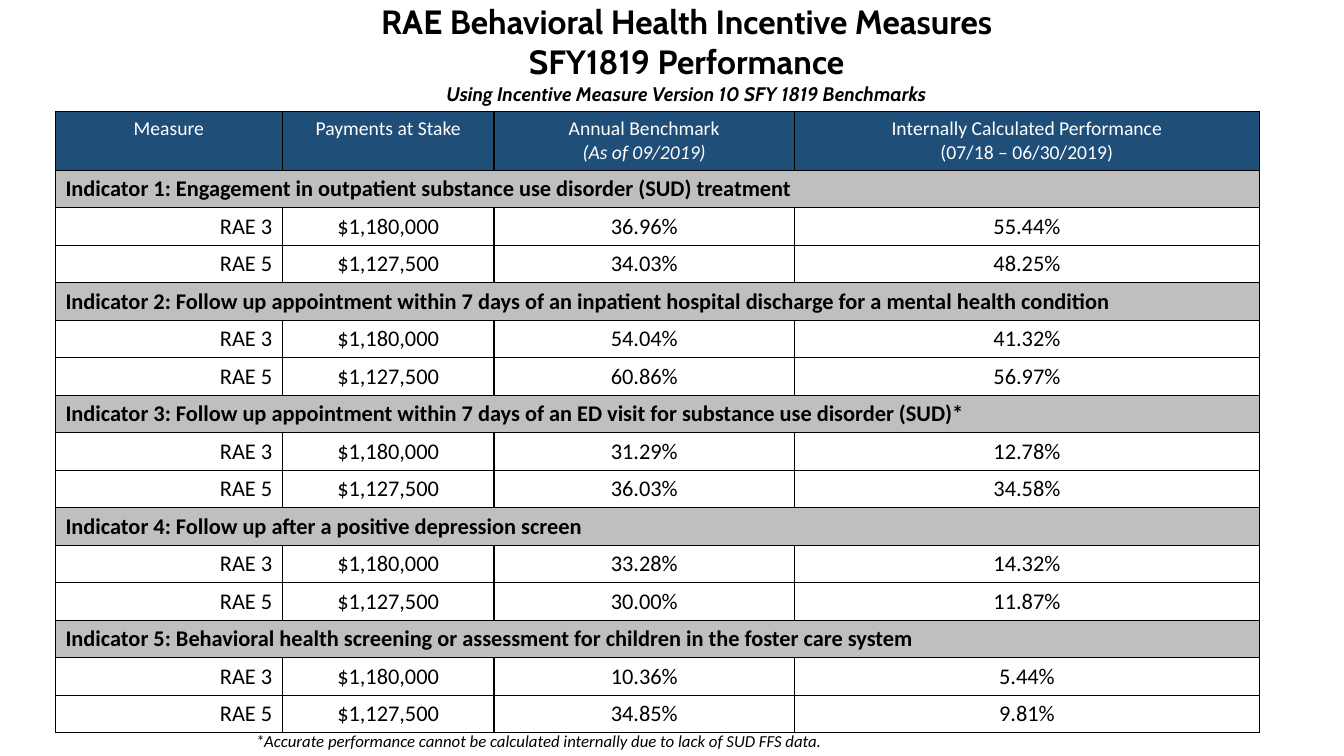
from lxml.etree import SubElement
from pptx import Presentation
from pptx.dml.color import RGBColor
from pptx.enum.text import PP_ALIGN as ALIGN
from pptx.oxml.ns import qn
from pptx.util import Inches, Pt

NAVY, GREY, WHITE, BLACK = "1F4E79", "BFBFBF", "FFFFFF", "000000"
COLUMN_WIDTHS = [2.25, 2.1, 2.98, 4.61]
HEADER_HEIGHT, ROW_HEIGHT = 0.58, 0.35
HEADERS = [
    "Measure",
    "Payments at Stake",
    "Annual Benchmark\n(As of 09/2019)",
    "Internally Calculated Performance\n(07/18 – 06/30/2019)",
]
PAYMENTS = {"RAE 3": "$1,180,000", "RAE 5": "$1,127,500"}
INDICATORS = [
    ("Engagement in outpatient substance use disorder (SUD) treatment",
     [("36.96%", "55.44%"), ("34.03%", "48.25%")]),
    ("Follow up appointment within 7 days of an inpatient hospital discharge for a mental health condition",
     [("54.04%", "41.32%"), ("60.86%", "56.97%")]),
    ("Follow up appointment within 7 days of an ED visit for substance use disorder (SUD)*",
     [("31.29%", "12.78%"), ("36.03%", "34.58%")]),
    ("Follow up after a positive depression screen",
     [("33.28%", "14.32%"), ("30.00%", "11.87%")]),
    ("Behavioral health screening or assessment for children in the foster care system",
     [("10.36%", "5.44%"), ("34.85%", "9.81%")]),
]


def rgb(color):
    """Turn a hex string into a colour."""
    return RGBColor.from_string(color)


def format_paragraph(p, size, color=BLACK, font="Calibri", bold=False, italic=False, align=ALIGN.LEFT):
    """Format a paragraph and all its runs."""
    p.alignment = align
    for r in p.runs:
        f = r.font
        f.name, f.size, f.bold, f.italic = font, Pt(size), bold, italic
        f.color.rgb = rgb(color)


def add_text(s, box, text):
    """Add a wrapping text box and return its text frame."""
    tf = s.shapes.add_textbox(*map(Inches, box)).text_frame
    tf.word_wrap = True
    tf.text = text
    return tf


def add_borders(cell):
    """Draw a thin black line on each side of a cell."""
    tc_pr = cell._tc.get_or_add_tcPr()
    for side in ("a:lnL", "a:lnR", "a:lnT", "a:lnB"):
        ln = SubElement(tc_pr, qn(side), w=str(Pt(1)))
        fill = SubElement(ln, qn("a:solidFill"))
        SubElement(fill, qn("a:srgbClr"), val=BLACK)


def fill_cell(cell, text, fill, size=16, **style):
    """Set the text, fill and text format of a cell."""
    cell.text = text
    cell.fill.solid()
    cell.fill.fore_color.rgb = rgb(fill)
    for p in cell.text_frame.paragraphs:
        format_paragraph(p, size, **style)


def add_title(s, box):
    """Add the two title lines and the subtitle."""
    tf = add_text(s, box, "RAE Behavioral Health Incentive Measures\nSFY1819 Performance\n"
                          "Using Incentive Measure Version 10 SFY 1819 Benchmarks")
    *titles, subtitle = tf.paragraphs
    for p in titles:
        format_paragraph(p, 24, font="Cabin", bold=True, align=ALIGN.CENTER)
    format_paragraph(subtitle, 14, font="Cabin", bold=True, italic=True, align=ALIGN.CENTER)


def add_measures_table(s, left, top):
    """Add the table of indicators, one band and two rows for each."""
    row_count = 1 + sum(1 + len(results) for _, results in INDICATORS)
    height = HEADER_HEIGHT + (row_count - 1) * ROW_HEIGHT
    table = s.shapes.add_table(row_count, len(COLUMN_WIDTHS), Inches(left), Inches(top),
                               Inches(sum(COLUMN_WIDTHS)), Inches(height)).table
    for column, width in zip(table.columns, COLUMN_WIDTHS):
        column.width = Inches(width)
    for i, row in enumerate(table.rows):
        row.height = Inches(ROW_HEIGHT if i else HEADER_HEIGHT)
        for cell in row.cells:
            add_borders(cell)

    for col, header in enumerate(HEADERS):
        fill_cell(table.cell(0, col), header, NAVY, size=14, color=WHITE, align=ALIGN.CENTER)
    as_of = table.cell(0, 2).text_frame.paragraphs[1]
    as_of.runs[0].font.italic = True

    row = 1
    for number, (name, results) in enumerate(INDICATORS, 1):
        band = table.cell(row, 0)
        band.merge(table.cell(row, len(COLUMN_WIDTHS) - 1))
        fill_cell(band, f"Indicator {number}: {name}", GREY, bold=True)
        for (region, payment), result in zip(PAYMENTS.items(), results):
            row += 1
            for col, text in enumerate((region, payment, *result)):
                align = ALIGN.CENTER if col else ALIGN.RIGHT
                fill_cell(table.cell(row, col), text, WHITE, align=align)
        row += 1


def add_footnote(s, box):
    """Add the note below the table."""
    tf = add_text(s, box, "*Accurate performance cannot be calculated internally due to lack of SUD FFS data.")
    format_paragraph(tf.paragraphs[0], 12, italic=True)


def main():
    """Build the slide and save it."""
    prs = Presentation()
    prs.slide_width, prs.slide_height = Inches(13.33), Inches(7.5)
    s = prs.slides.add_slide(prs.slide_layouts[6])
    add_measures_table(s, 0.55, 1.11)
    add_footnote(s, (2.44, 7.2, 9.36, 0.3))
    add_title(s, (1.81, -0.04, 10, 0.82))
    prs.save("out.pptx")


if __name__ == "__main__":
    main()
